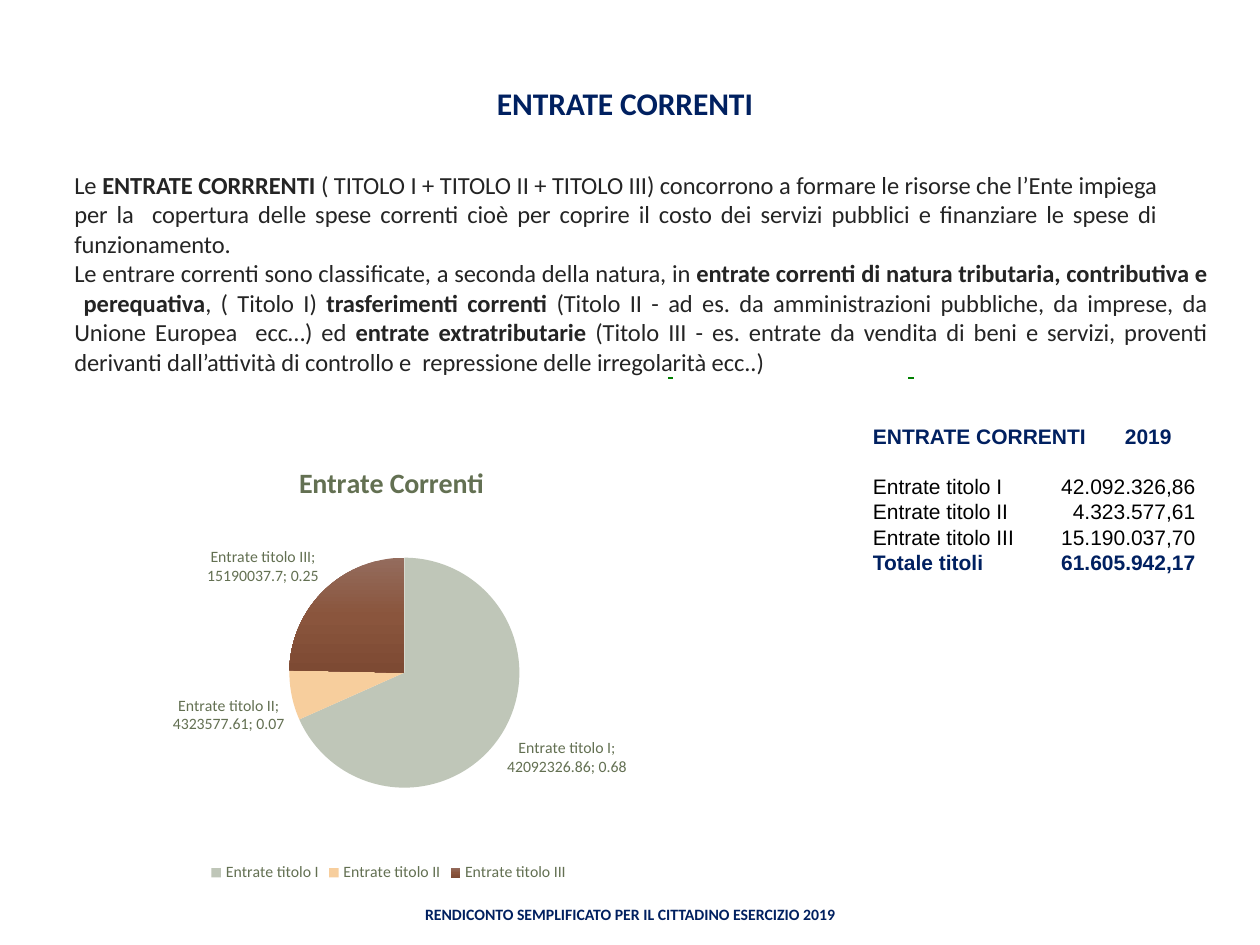
from copy import deepcopy

from lxml import etree
from pptx import Presentation
from pptx.chart.data import CategoryChartData
from pptx.dml.color import RGBColor
from pptx.enum.chart import XL_CHART_TYPE, XL_LABEL_POSITION, XL_LEGEND_POSITION
from pptx.enum.shapes import MSO_CONNECTOR
from pptx.enum.text import MSO_ANCHOR, MSO_AUTO_SIZE, PP_ALIGN
from pptx.oxml import parse_xml
from pptx.oxml.ns import nsdecls, qn
from pptx.util import Inches, Pt

PIE = XL_CHART_TYPE.PIE
OUTSIDE_END = XL_LABEL_POSITION.OUTSIDE_END
BOTTOM = XL_LEGEND_POSITION.BOTTOM
STRAIGHT = MSO_CONNECTOR.STRAIGHT
TOP, MIDDLE = MSO_ANCHOR.TOP, MSO_ANCHOR.MIDDLE
CENTER, JUSTIFY = PP_ALIGN.CENTER, PP_ALIGN.JUSTIFY

NAVY = RGBColor(0x00, 0x20, 0x60)
BLACK = RGBColor(0x00, 0x00, 0x00)
CHARCOAL = RGBColor(0x24, 0x24, 0x24)
GREEN = RGBColor(0x00, 0x80, 0x00)
OLIVE = RGBColor(0x63, 0x70, 0x52)
SAGE = RGBColor(0xBF, 0xC6, 0xB8)
PEACH = RGBColor(0xF7, 0xCE, 0x9D)
BROWNS = [RGBColor(0x94, 0x6C, 0x5D), RGBColor(0x8A, 0x55, 0x3D), RGBColor(0x7D, 0x4A, 0x33)]

MARGIN = 0.58
TITLE = "ENTRATE CORRENTI"
FOOTER = "RENDICONTO SEMPLIFICATO PER IL CITTADINO ESERCIZIO 2019"

# Each paragraph is a list of (text, bold) pieces
BODY = [
    [("Le ", False), ("ENTRATE CORRRENTI ", True),
     ("( TITOLO I + TITOLO II + TITOLO III) concorrono a formare le risorse che l’Ente "
      "impiega per la  copertura delle spese correnti cioè per coprire il costo dei servizi "
      "pubblici e finanziare le spese di funzionamento.", False)],
    [("Le entrare correnti sono classificate, a seconda della natura, in ", False),
     ("entrate correnti di natura tributaria, contributiva e  perequativa", True),
     (", ( Titolo I) ", False), ("trasferimenti correnti ", True),
     ("(Titolo II - ad es. da amministrazioni pubbliche, da imprese, da Unione Europea  ecc…) ed ",
      False),
     ("entrate extratributarie ", True),
     ("(Titolo III - es. entrate da vendita di beni e servizi, proventi derivanti "
      "dall’attività di controllo e  repressione delle irregolarità ecc..)", False)],
]
REVENUES = [("Entrate titolo I", 42092326.86), ("Entrate titolo II", 4323577.61),
            ("Entrate titolo III", 15190037.70)]


def set_values(target, values):
    for name, value in values.items():
        setattr(target, name, value)


def set_font(font, size, color, bold=False, name="Calibri"):
    set_values(font, {"name": name, "size": Pt(size), "bold": bold})
    font.color.rgb = color


def add_run(paragraph, text, size, color, bold=False, name="Calibri", spacing=0):
    run = paragraph.add_run()
    run.text = text
    set_font(run.font, size, color, bold, name)
    if spacing:
        run.font._element.set("spc", str(spacing))


def add_text_frame(slide, left, top, width, height, **frame_format):
    box = slide.shapes.add_textbox(Inches(left), Inches(top), Inches(width), Inches(height))
    set_values(box.text_frame, {"word_wrap": True, **frame_format})
    return box.text_frame


def next_paragraph(frame, index):
    return frame.paragraphs[0] if index == 0 else frame.add_paragraph()


def format_title(slide):
    title = slide.shapes.title
    set_values(title, {"left": Inches(1.17), "top": Inches(0.62),
                       "width": Inches(7.58), "height": Inches(0.4)})
    set_values(title.text_frame, {"vertical_anchor": TOP, "auto_size": MSO_AUTO_SIZE.NONE})
    paragraph = title.text_frame.paragraphs[0]
    paragraph.alignment = CENTER
    add_run(paragraph, TITLE, 18, NAVY, True, spacing=-5)


def add_body(slide):
    frame = add_text_frame(slide, MARGIN, 1.34, 9, 1.66, margin_left=0, margin_right=0,
                           margin_top=Inches(0.01), margin_bottom=0)
    for index, (pieces, right_indent) in enumerate(zip(BODY, (0.4, 0))):
        paragraph = next_paragraph(frame, index)
        paragraph.alignment = JUSTIFY
        properties = paragraph._p.get_or_add_pPr()
        properties.set("marL", str(Inches(0.01)))
        properties.set("marR", str(Inches(right_indent)))
        for text, bold in pieces:
            add_run(paragraph, text, 14, CHARCOAL, bold, spacing=-5)


def add_dash(slide, left):
    dash = slide.shapes.add_connector(STRAIGHT, Inches(left), Inches(3),
                                      Inches(left + 0.04), Inches(3))
    dash.line.color.rgb = GREEN
    dash.line.width = Pt(0.75)
    etree.SubElement(dash._element.spPr, qn("a:effectLst"))


def italian_number(value):
    return f"{value:,.2f}".translate(str.maketrans(",.", ".,"))


def add_tab_stop(paragraph, position, alignment):
    tabs = etree.SubElement(paragraph._p.get_or_add_pPr(), qn("a:tabLst"))
    etree.SubElement(tabs, qn("a:tab"), pos=str(Inches(position)), algn=alignment)


def add_amounts(slide):
    frame = add_text_frame(slide, 6.83, 3.31, 3, 2.12)
    total = sum(value for _, value in REVENUES)
    rows = [(TITLE, "2019", NAVY, True)]
    rows += [(name, italian_number(value), BLACK, False) for name, value in REVENUES]
    rows.append(("Totale titoli", italian_number(total), NAVY, True))
    for index, (label, amount, color, bold) in enumerate(rows):
        paragraph = next_paragraph(frame, index)
        if index == 0:
            paragraph.space_after = Pt(14.4)
            add_tab_stop(paragraph, 2, "l")
        else:
            add_tab_stop(paragraph, 2.56, "r")
        add_run(paragraph, f"{label}\t{amount}", 12, color, bold, "Arial")


def manual_layout(left, top, width=None, height=None):
    sizes = {"x": left, "y": top, "w": width, "h": height}
    target = '<c:layoutTarget val="inner"/>' if width else ""
    modes = '<c:xMode val="edge"/><c:yMode val="edge"/>'
    values = "".join(f'<c:{key} val="{size}"/>' for key, size in sizes.items() if size)
    return parse_xml(f'<c:layout {nsdecls("c")}><c:manualLayout>{target}{modes}{values}'
                     "</c:manualLayout></c:layout>")


def set_layout(element, layout, index):
    for old_layout in element.findall(qn("c:layout")):
        element.remove(old_layout)
    element.insert(index, layout)


def fill_slices(chart):
    points = chart.plots[0].series[0].points
    for index, color in enumerate((SAGE, PEACH)):
        points[index].format.fill.solid()
        points[index].format.fill.fore_color.rgb = color
    # The last slice fades from top to bottom
    fill = points[2].format.fill
    fill.gradient()
    fill.gradient_angle = 270
    stop_list = chart._chartSpace.xpath(".//a:gsLst")[0]
    stop_list.append(deepcopy(stop_list[0]))
    for stop, color, position in zip(fill.gradient_stops, BROWNS, (0, 0.5, 1)):
        stop.color.rgb = color
        stop.position = position


def add_pie(slide):
    data = CategoryChartData()
    data.categories = [name for name, _ in REVENUES]
    data.add_series("Series 1", [value for _, value in REVENUES])
    chart = slide.shapes.add_chart(PIE, Inches(MARGIN), Inches(3.46), Inches(5.01),
                                   Inches(3.58), data).chart
    set_font(chart.font, 10, BLACK)
    # Title and plot position
    chart.has_title = True
    add_run(chart.chart_title.text_frame.paragraphs[0], "Entrate Correnti", 16, OLIVE, True)
    set_layout(chart.chart_title._element, manual_layout(0.35, 0.05), 1)
    set_layout(chart._chartSpace.chart.plotArea, manual_layout(0.34, 0.27, 0.37, 0.51), 0)
    # Legend
    chart.has_legend = True
    set_values(chart.legend, {"position": BOTTOM, "include_in_layout": False})
    set_font(chart.legend.font, 9, OLIVE)
    # Slices and labels
    plot = chart.plots[0]
    plot.vary_by_categories = True
    fill_slices(chart)
    labels = plot.series[0].data_labels
    set_values(labels, {"show_value": True, "show_percentage": True,
                        "show_category_name": True, "show_legend_key": False,
                        "position": OUTSIDE_END, "number_format": "#,##0.00",
                        "number_format_is_linked": False})
    set_font(labels.font, 9, OLIVE)
    separator = etree.Element(qn("c:separator"))
    separator.text = "; "
    labels._element.find(qn("c:showBubbleSize")).addnext(separator)


def add_footer(slide):
    frame = add_text_frame(slide, 3.02, 7.06, 3.96, 0.4, vertical_anchor=MIDDLE)
    frame.paragraphs[0].alignment = CENTER
    add_run(frame.paragraphs[0], FOOTER, 9, NAVY, True)


def main():
    presentation = Presentation()
    set_values(presentation, {"slide_width": Inches(10), "slide_height": Inches(7.5)})
    slide = presentation.slides.add_slide(presentation.slide_layouts[5])
    format_title(slide)
    add_body(slide)
    for left in (5.3, 7.21):
        add_dash(slide, left)
    add_pie(slide)
    add_footer(slide)
    add_amounts(slide)
    presentation.save("out.pptx")


if __name__ == "__main__":
    main()
